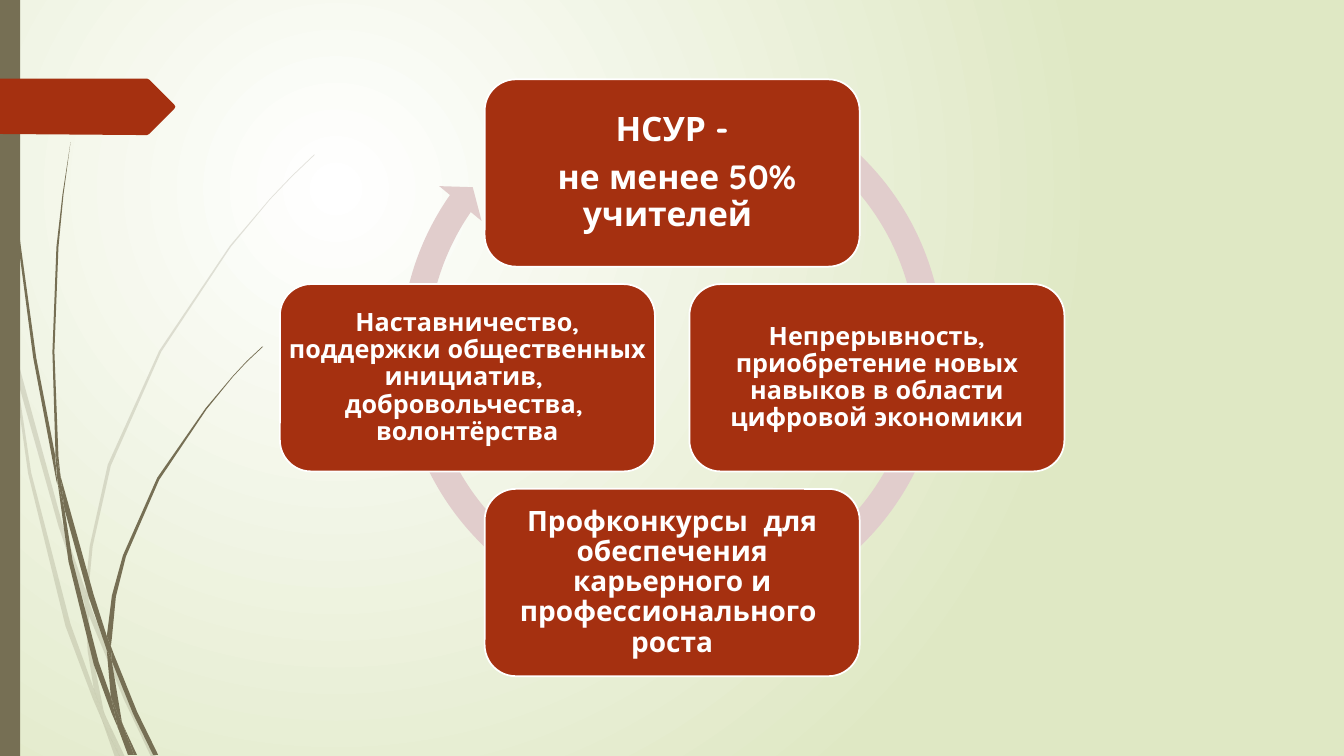
import math
from dataclasses import dataclass

import lxml.etree
import pptx
import pptx.dml.color
import pptx.enum.dml
import pptx.enum.shapes
import pptx.enum.text
import pptx.oxml.ns
import pptx.util

Cm = pptx.util.Cm
SHAPES = pptx.enum.shapes.MSO_SHAPE


@dataclass(frozen=True)
class Theme:
    font: str = "Quicksand"
    white: str = "FFFFFF"
    meadow: str = "DFE8C4"
    olive: str = "766F54"
    brick: str = "A53010"
    rose: str = "E1CDCC"
    large: int = 24
    medium: int = 20
    small: int = 18


THEME = Theme()
WIDTH, HEIGHT = 33.87, 19.05
CENTER_X, CENTER_Y = 16.94, 9.52
CARD_WIDTH, CARD_HEIGHT = 9.45, 4.72
CARD_ORBIT = 5.16
RING_SIZE = 14.38
GRID_UNIT = 0.0254  # cm; outlines below are on this grid

PALE_GRASS = [
    [(11, 350), (9, 322), (0, 282), (0, 299), (10, 344)],
    [(58, 522), (84, 599), (85, 586), (62, 520), (14, 345), (17, 376)],
    [(92, 607), (88, 596), (88, 610), (123, 694), (150, 751), (155, 751),
     (127, 692)],
    [(119, 751), (124, 751), (105, 711)],
    [(93, 683), (70, 619), (31, 469), (17, 376), (11, 350), (28, 470),
     (65, 621), (92, 693), (101, 714), (99, 707)],
    [(84, 599), (87, 646), (93, 683), (96, 692), (105, 711), (103, 706),
     (91, 646), (88, 610), (88, 608)],
    [(88, 584), (92, 542), (110, 462), (160, 349), (229, 245), (268, 198),
     (290, 175), (312, 154), (312, 153), (289, 175), (268, 197), (228, 244),
     (158, 348), (107, 461), (89, 542), (85, 584), (85, 586), (88, 596)],
    [(101, 714), (114, 751), (119, 751)],
    [(88, 608), (88, 610), (88, 596), (85, 586), (84, 599)],
    [(96, 692), (93, 683), (99, 707), (101, 714), (119, 751), (105, 711)],
]
DARK_GRASS = [
    [(7, 110), (17, 233), (33, 355), (56, 477), (57, 481), (55, 457),
     (55, 453), (36, 355), (19, 232), (8, 109), (5, 48), (4, 0), (3, 0),
     (4, 48)],
    [(88, 592), (106, 645), (106, 631), (93, 590), (60, 472), (64, 505)],
    [(113, 649), (110, 641), (111, 656), (132, 708), (152, 749), (157, 749),
     (136, 706)],
    [(110, 691), (98, 657), (72, 556), (64, 505), (57, 477), (68, 557),
     (93, 659), (111, 708), (117, 722), (116, 717)],
    [(60, 472), (58, 453), (54, 349), (58, 245), (63, 193), (70, 141),
     (62, 193), (56, 245), (52, 349), (55, 449)],
    [(133, 749), (136, 749), (122, 719)],
    [(57, 477), (64, 505), (60, 472), (55, 449), (55, 453)],
    [(111, 633), (115, 592), (125, 552), (158, 476), (205, 406), (231, 374),
     (245, 359), (261, 344), (260, 344), (245, 358), (231, 373), (204, 405),
     (156, 474), (122, 551), (111, 591), (106, 631), (110, 641)],
    [(117, 722), (127, 749), (131, 749)],
    [(106, 645), (110, 691), (116, 706), (122, 719), (121, 716), (111, 656),
     (109, 651)],
    [(106, 645), (109, 651), (111, 656), (110, 641), (106, 631)],
    [(116, 706), (110, 691), (116, 717), (117, 722), (130, 749), (133, 749),
     (122, 719)],
]
PAGE_MARKER = [(0, 78), (146, 78), (148, 79), (173, 104), (174, 106),
               (173, 108), (148, 133), (146, 134), (136, 134), (0, 133)]

# Clockwise from the top: type size, inset in cm, paragraphs
CARDS = [
    (THEME.large, 0.25, ["НСУР -", " не менее 50% учителей "]),
    (THEME.small, 0.18, ["Непрерывность, приобретение новых навыков в области "
                         "цифровой экономики"]),
    (THEME.medium, 0.2, ["Профконкурсы  для обеспечения карьерного и "
                         "профессионального  роста"]),
    (THEME.small, 0.18, ["Наставничество, поддержки общественных инициатив,  "
                         "добровольчества,  волонтёрства"]),
]


def rgb(color):
    return pptx.dml.color.RGBColor.from_string(color)


class SlideBuilder:
    def __init__(self, slide, theme):
        self.slide = slide
        self.theme = theme

    def radial_background(self, inner, outer):
        """Fill the page with a circular gradient centred a quarter in."""
        fill = self.slide.background.fill
        fill.gradient()
        for stop, color in zip(fill.gradient_stops, (inner, outer)):
            stop.color.rgb = rgb(color)
        qn = pptx.oxml.ns.qn
        gradient = self.slide.element.find(".//" + qn("a:gradFill"))
        gradient.remove(gradient.find(qn("a:lin")))
        circle = lxml.etree.SubElement(gradient, qn("a:path"), path="circle")
        lxml.etree.SubElement(circle, qn("a:fillToRect"), l="50000",
                              t="50000", r="100000", b="100000")

    def paint(self, shape, color, opacity=100, outline=None):
        shape.shadow.inherit = False
        shape.fill.solid()
        shape.fill.fore_color.rgb = rgb(color)
        if opacity < 100:
            qn = pptx.oxml.ns.qn
            tint = shape.element.spPr.find(".//" + qn("a:srgbClr"))
            lxml.etree.SubElement(tint, qn("a:alpha"), val=str(opacity * 1000))
        if outline:
            shape.line.color.rgb = rgb(outline)
            shape.line.width = pptx.util.Pt(1.25)
        else:
            shape.line.fill.background()
        return shape

    def outline(self, points, color, opacity=100):
        """Draw a filled closed outline from points in grid units."""
        builder = self.slide.shapes.build_freeform(*points[0],
                                                   scale=Cm(GRID_UNIT))
        builder.add_line_segments(points[1:], close=True)
        return self.paint(builder.convert_to_shape(), color, opacity)

    def preset(self, kind, left, top, width, height, color, outline=None):
        shape = self.slide.shapes.add_shape(kind, Cm(left), Cm(top),
                                            Cm(width), Cm(height))
        return self.paint(shape, color, outline=outline)

    def ring_arrow(self, center_x, center_y, size, color):
        arrow = self.preset(SHAPES.CIRCULAR_ARROW, center_x - size / 2,
                            center_y - size / 2, size, size, color)
        thickness, head_width = 4.7, 4.8  # percent
        head_angle, end_angle, start_angle = 4.55, 214.81, 299.87  # degrees
        values = (thickness / 100, head_angle * 0.6, end_angle * 0.6,
                  start_angle * 0.6, head_width / 100)
        for index, value in enumerate(values):
            arrow.adjustments[index] = value

    def text(self, left, top, width, height, size, inset, lines):
        box = self.slide.shapes.add_textbox(Cm(left), Cm(top),
                                            Cm(width), Cm(height))
        frame = box.text_frame
        frame.word_wrap = True
        frame.vertical_anchor = pptx.enum.text.MSO_ANCHOR.MIDDLE
        frame.margin_left = frame.margin_right = Cm(inset)
        frame.margin_top = frame.margin_bottom = Cm(inset)
        for index, line in enumerate(lines):
            para = frame.add_paragraph() if index else frame.paragraphs[0]
            para.alignment = pptx.enum.text.PP_ALIGN.CENTER
            para.line_spacing = 0.9
            para.space_after = pptx.util.Pt(size * 0.35)
            span = para.add_run()
            span.text = line
            span.font.name = self.theme.font
            span.font.size = pptx.util.Pt(size)
            span.font.bold = True
            span.font.color.rgb = rgb(self.theme.white)

    def card(self, center_x, center_y, size, inset, lines):
        frame = (center_x - CARD_WIDTH / 2, center_y - CARD_HEIGHT / 2,
                 CARD_WIDTH, CARD_HEIGHT)
        self.preset(SHAPES.ROUNDED_RECTANGLE, *frame, self.theme.brick,
                    outline=self.theme.white)
        self.text(*frame, size, inset, lines)


def main():
    deck = pptx.Presentation()
    deck.slide_width, deck.slide_height = Cm(WIDTH), Cm(HEIGHT)
    page = SlideBuilder(deck.slides.add_slide(deck.slide_layouts[6]), THEME)

    page.radial_background(THEME.white, THEME.meadow)
    for grass, opacity in ((PALE_GRASS, 20), (DARK_GRASS, 100)):
        for blade in grass:
            page.outline(blade, THEME.olive, opacity)
    page.preset(SHAPES.RECTANGLE, 0, 0, 0.51, HEIGHT, THEME.olive)
    page.outline(PAGE_MARKER, THEME.brick)

    page.ring_arrow(CENTER_X, 8.84, RING_SIZE, THEME.rose)
    for index, card in enumerate(CARDS):
        angle = math.tau * index / len(CARDS)
        page.card(CENTER_X + CARD_ORBIT * math.sin(angle),
                  CENTER_Y - CARD_ORBIT * math.cos(angle), *card)
    deck.save("out.pptx")


if __name__ == "__main__":
    main()
